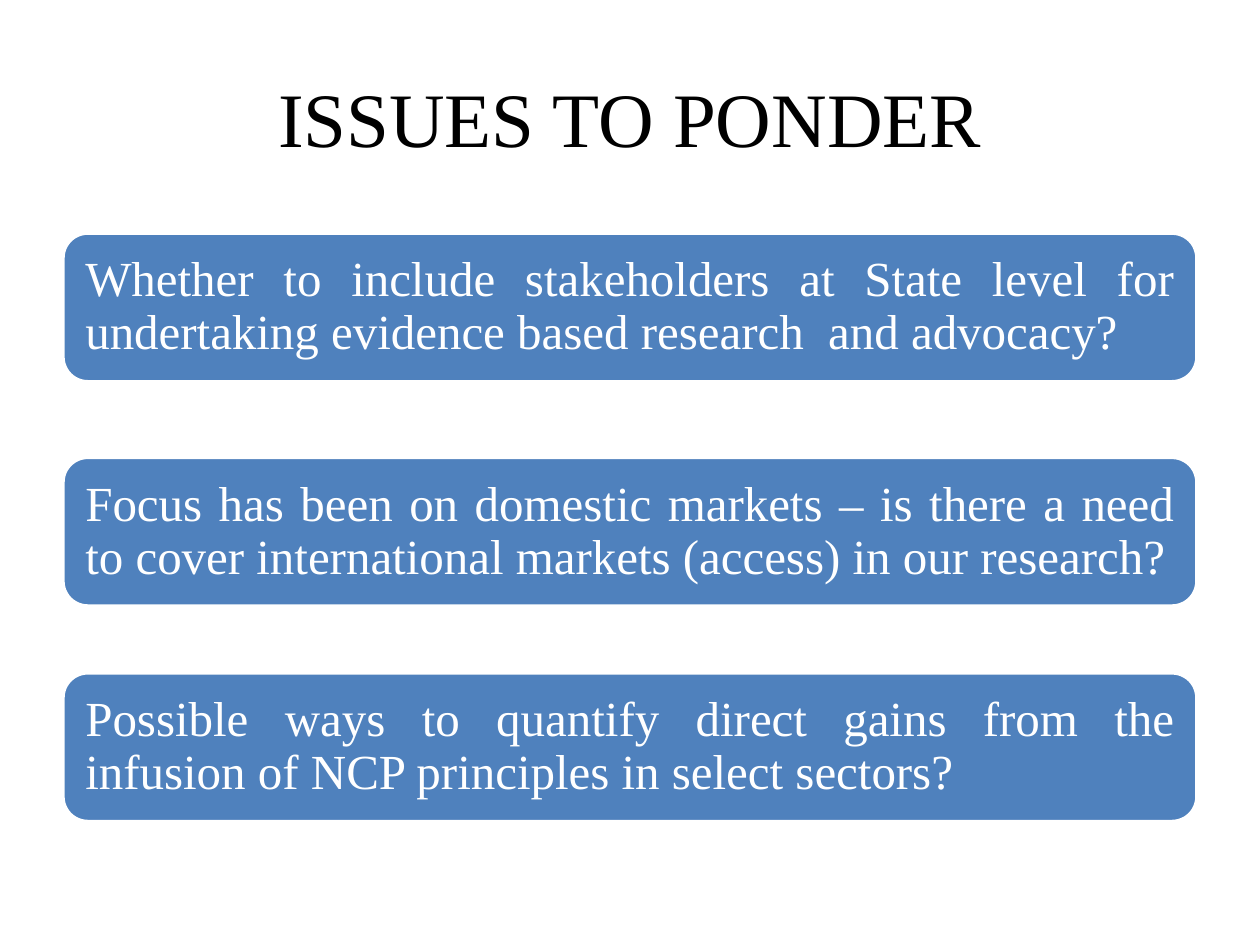
from dataclasses import dataclass

from pptx import Presentation
from pptx.dml.color import RGBColor
from pptx.enum.shapes import MSO_SHAPE as Shape
from pptx.enum.text import MSO_ANCHOR as Anchor, PP_ALIGN as Align
from pptx.slide import Slide
from pptx.text.text import TextFrame
from pptx.util import Inches, Pt

BLACK = RGBColor(0x00, 0x00, 0x00)
WHITE = RGBColor(0xFF, 0xFF, 0xFF)
BLUE = RGBColor(0x4F, 0x81, 0xBD)
FONT = "Times New Roman"
LEFT = 0.5
WIDTH = 9
ISSUE_HEIGHT = 1.18
INSET = 0.12


@dataclass(frozen=True)
class Issue:
    top: float
    text: str


ISSUES = [
    Issue(1.85, "Whether to include stakeholders at State level for undertaking "
                "evidence based research  and advocacy?"),
    Issue(3.63, "Focus has been on domestic markets – is there a need to cover "
                "international markets (access) in our research?"),
    Issue(5.34, "Possible ways to quantify direct gains from the infusion of NCP "
                "principles in select sectors?"),
]


def write_text(frame: TextFrame, text: str, size: float, color: RGBColor,
               align: Align, line_spacing: float) -> None:
    frame.word_wrap = True
    frame.vertical_anchor = Anchor.MIDDLE
    para = frame.paragraphs[0]
    para.alignment = align
    para.line_spacing = line_spacing
    span = para.add_run()
    span.text = text
    span.font.name = FONT
    span.font.size = Pt(size)
    span.font.color.rgb = color


def add_title(page: Slide, text: str) -> None:
    title = page.shapes.title
    title.left, title.top = Inches(LEFT), Inches(0.3)
    title.width, title.height = Inches(WIDTH), Inches(1.25)
    write_text(title.text_frame, text, 44, BLACK, Align.CENTER, 1.0)


def add_issue(page: Slide, issue: Issue) -> None:
    box = page.shapes.add_shape(Shape.ROUNDED_RECTANGLE, Inches(LEFT), Inches(issue.top),
                                Inches(WIDTH), Inches(ISSUE_HEIGHT))
    box.shadow.inherit = False
    box.fill.solid()
    box.fill.fore_color.rgb = BLUE
    box.line.color.rgb = WHITE
    box.line.width = Pt(2)
    frame = box.text_frame
    frame.margin_left = frame.margin_right = Inches(INSET)
    frame.margin_top = frame.margin_bottom = Inches(INSET)
    write_text(frame, issue.text, 28, WHITE, Align.JUSTIFY, 0.9)


def main() -> None:
    deck = Presentation()
    deck.slide_width, deck.slide_height = Inches(10), Inches(7.5)
    page = deck.slides.add_slide(deck.slide_layouts[5])
    add_title(page, "ISSUES TO PONDER")
    for issue in ISSUES:
        add_issue(page, issue)
    deck.save("out.pptx")


if __name__ == "__main__":
    main()
